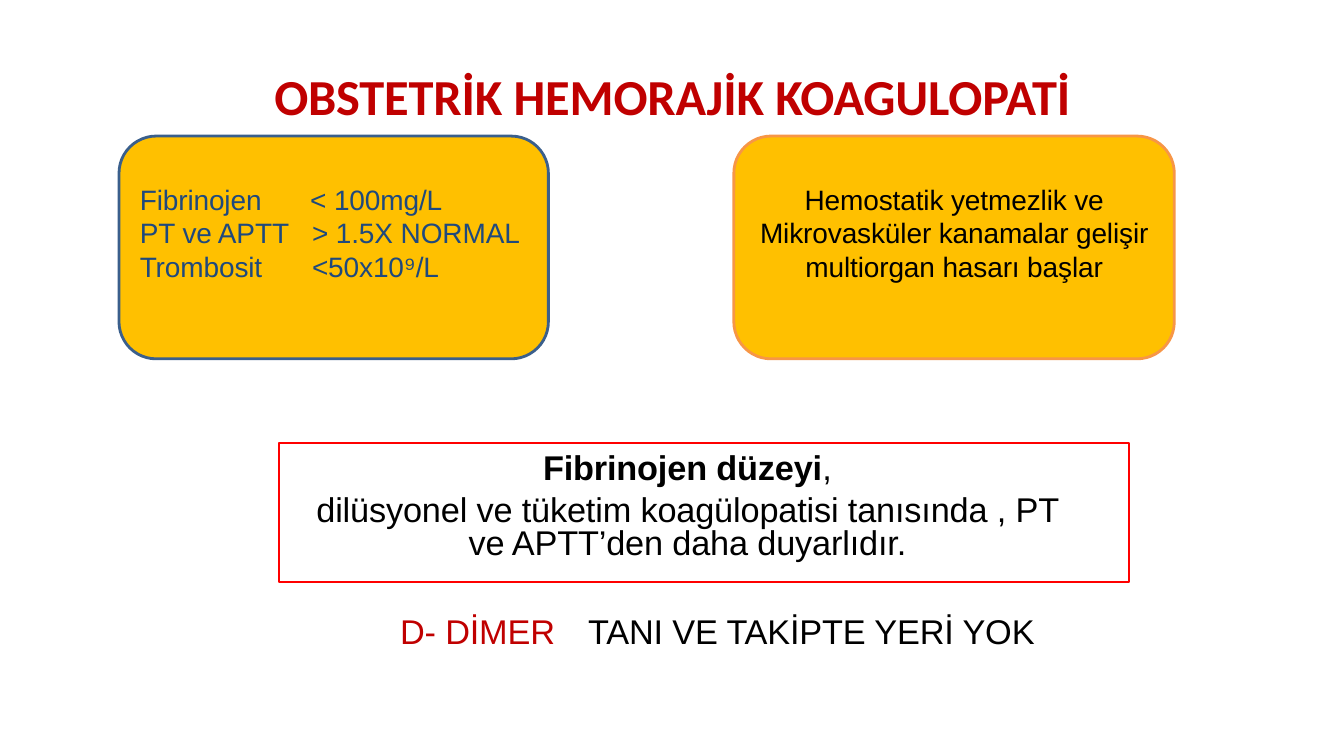
from lxml.etree import SubElement
from pptx import Presentation
from pptx.dml.color import RGBColor
from pptx.enum.shapes import MSO_SHAPE as Shape
from pptx.enum.text import MSO_ANCHOR as Anchor, PP_ALIGN as Align
from pptx.oxml.ns import qn
from pptx.util import Inches, Pt

COLUMNS, ROWS = 96, 54
RED, NAVY, BLACK, AMBER = "C00000", "1F497D", "000000", "FFC000"


def color(value):
    return RGBColor.from_string(value)


class SlideBuilder:
    """Holds the text style and the slide; lengths are grid columns and rows."""

    def __init__(self, presentation):
        self.slide = presentation.slides.add_slide(presentation.slide_layouts[6])
        self.column = presentation.slide_width / COLUMNS
        self.row = presentation.slide_height / ROWS
        self.font = "Arial"
        self.tracking = "-10"

    def place(self, left, top, width, height):
        return (round(left * self.column), round(top * self.row),
                round(width * self.column), round(height * self.row))

    def style(self, run, size, value, bold=False, font=None):
        run.font.name = font or self.font
        run.font.size = Pt(size)
        run.font.bold = bold
        run.font.color.rgb = color(value)
        run._r.get_or_add_rPr().set("spc", self.tracking)

    def indent(self, paragraph, columns):
        properties = paragraph._p.get_or_add_pPr()
        properties.set("marL", str(round(columns * self.column)))
        properties.set("indent", "0")

    def tab(self, paragraph, columns):
        stops = SubElement(paragraph._p.get_or_add_pPr(), qn("a:tabLst"))
        SubElement(stops, qn("a:tab"), pos=str(round(columns * self.column)), algn="l")

    def text(self, box, lines, align=Align.CENTER):
        """Write lines, each a list of (text, style) pieces."""
        frame = self.slide.shapes.add_textbox(*self.place(*box)).text_frame
        frame.word_wrap = True
        frame.margin_left = frame.margin_right = 0
        frame.margin_top = frame.margin_bottom = 0
        for number, pieces in enumerate(lines):
            paragraph = frame.add_paragraph() if number else frame.paragraphs[0]
            paragraph.alignment = align
            for words, style in pieces:
                run = paragraph.add_run()
                run.text = words
                self.style(run, **style)
        return frame

    def shape(self, kind, box, line, width, fill=None):
        shape = self.slide.shapes.add_shape(kind, *self.place(*box))
        shape.shadow.inherit = False
        if fill:
            shape.fill.solid()
            shape.fill.fore_color.rgb = color(fill)
        else:
            shape.fill.background()
        shape.line.color.rgb = color(line)
        shape.line.width = Pt(width)
        return shape

    def card(self, left, width, line, words, value, align, tabs=()):
        shape = self.shape(Shape.ROUNDED_RECTANGLE, (left, 9.72, width, 15.91),
                           line, 2, AMBER)
        frame = shape.text_frame
        frame.word_wrap = True
        frame.vertical_anchor = Anchor.MIDDLE
        frame.margin_bottom = round(2.5 * self.row)
        frame.text = words
        for paragraph in frame.paragraphs:
            paragraph.alignment = align
            for run in paragraph.runs:
                self.style(run, 20, value)
        for paragraph, position in zip(frame.paragraphs, tabs):
            self.tab(paragraph, position)


def main():
    presentation = Presentation()
    presentation.slide_width = Inches(13.33)
    presentation.slide_height = Inches(7.5)
    builder = SlideBuilder(presentation)

    # Title
    heading = dict(size=36, value=RED, bold=True, font="Calibri")
    title = builder.text((13.75, 4.6, 68.55, 4.4),
                         [[("OBSTETRİK HEMORAJİK KOAGULOPATİ", heading)]])
    title.vertical_anchor = Anchor.MIDDLE

    # Framed statement on fibrinogen
    plain = dict(size=24.5, value=BLACK)
    statement = builder.text((19.87, 31.9, 56.52, 8.3), [
        [("Fibrinojen düzeyi", dict(plain, bold=True)), (",", plain)],
        [("dilüsyonel ve tüketim koagülopatisi tanısında , PT ve APTT’den "
          "daha duyarlıdır.", plain)],
    ])
    detail = statement.paragraphs[1]
    detail.line_spacing = 0.8
    detail.space_before = Pt(5.8)
    for paragraph in statement.paragraphs:
        builder.indent(paragraph, 1.95)
    builder.shape(Shape.RECTANGLE, (19.94, 31.64, 60.7, 9.92), "FF0000", 1.8)

    # D-dimer remark
    remark = builder.text((28.58, 43.56, 50, 2.9), [
        [("D- DİMER", dict(plain, value=RED)), ("\tTANI VE TAKİPTE YERİ YOK", plain)],
    ], Align.LEFT)
    builder.tab(remark.paragraphs[0], 13.43)

    # Laboratory limits and their consequence
    builder.card(8.5, 30.67, "3A5F8C",
                 "Fibrinojen\t< 100mg/L\nPT ve APTT\t> 1.5X NORMAL\nTrombosit\t<50x10⁹/L",
                 NAVY, Align.LEFT, (12.17, 12.3, 12.3))
    builder.card(52.42, 31.46, "F79646",
                 "Hemostatik yetmezlik ve Mikrovasküler kanamalar gelişir "
                 "multiorgan hasarı başlar", BLACK, Align.CENTER)

    presentation.save("out.pptx")


if __name__ == "__main__":
    main()
